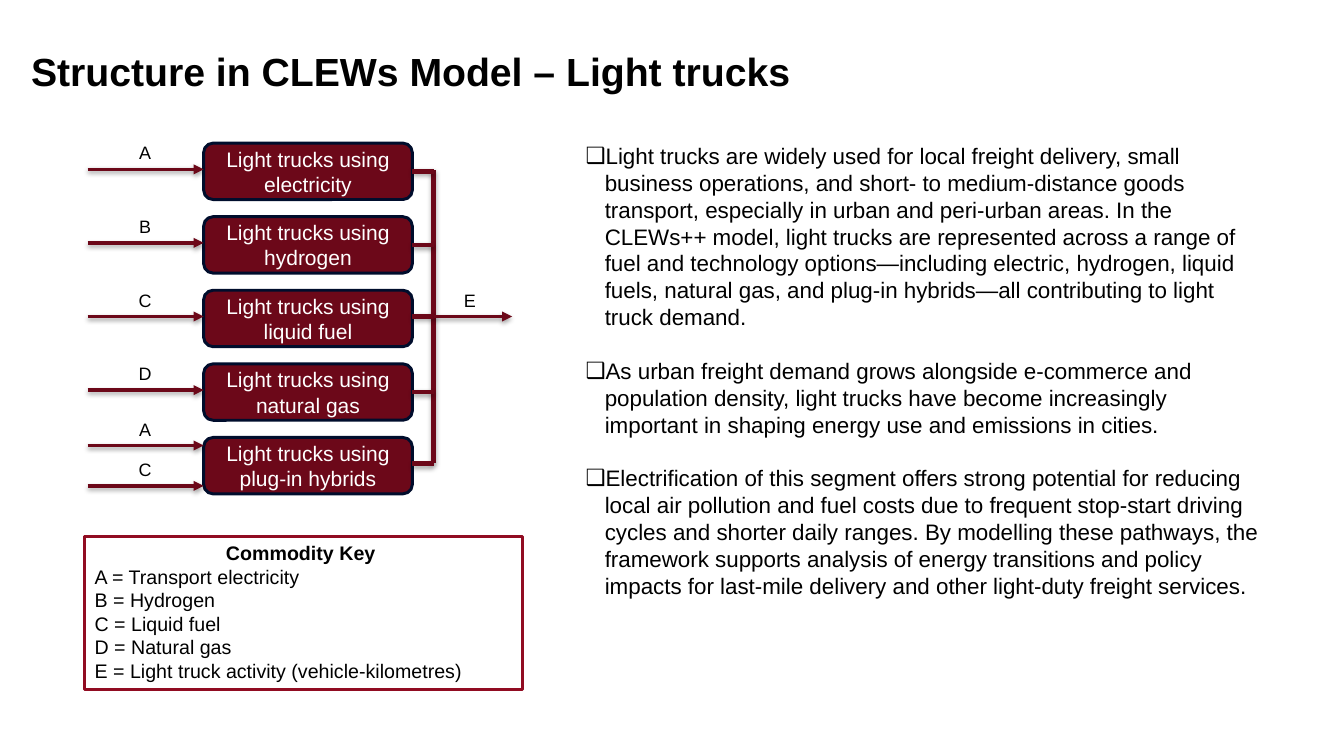
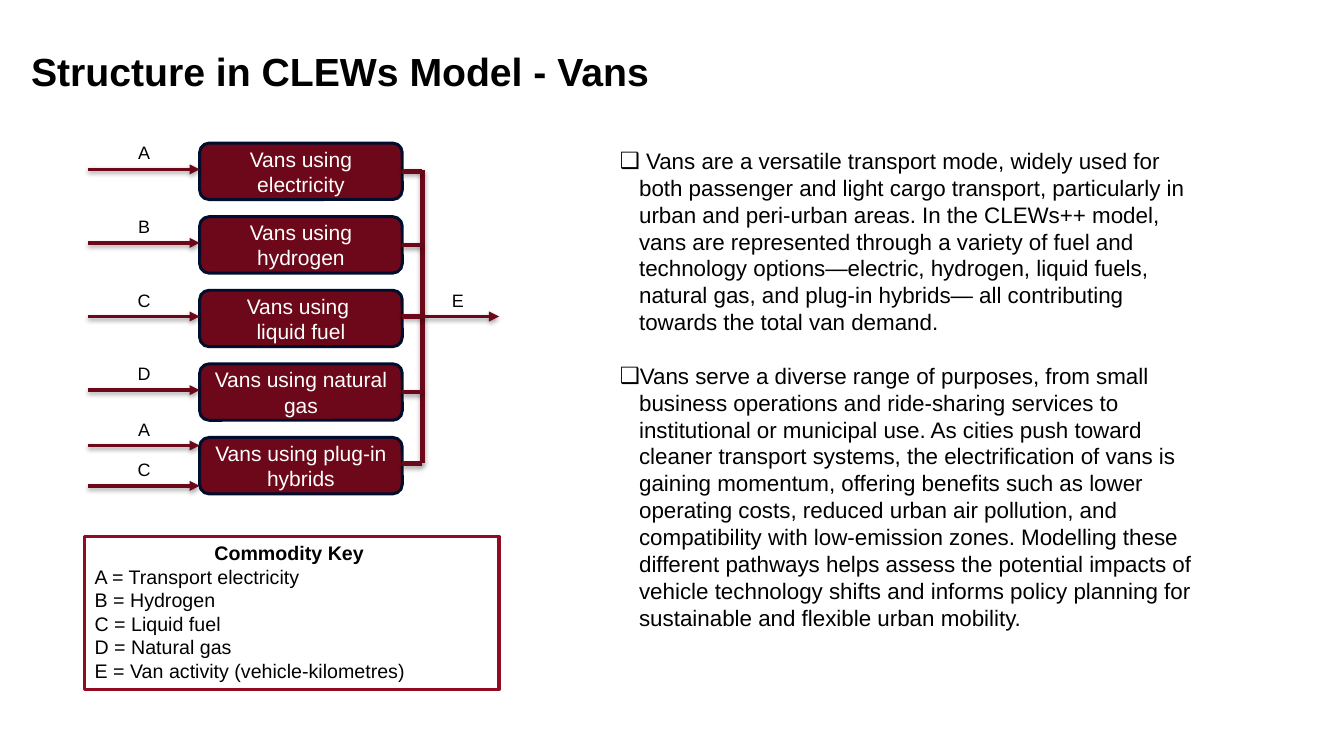
from copy import deepcopy

from lxml.etree import SubElement
from pptx import Presentation
from pptx.dml.color import RGBColor
from pptx.enum.shapes import MSO_CONNECTOR, MSO_SHAPE
from pptx.enum.text import MSO_ANCHOR, PP_ALIGN
from pptx.oxml.ns import qn
from pptx.util import Inches, Pt

# Shared colours and text formats
BLACK, WHITE = "000000", "FFFFFF"
MAROON, NAVY, KEY_RED = "6C0819", "000D2C", "910C22"
TITLE = {"name": "Arial", "size": Pt(28), "bold": True}
BODY = {"name": "Arial", "size": Pt(16)}
BOX = {"name": "Arial", "size": Pt(15)}
LABEL = {"name": "Arial", "size": Pt(12.8)}
KEY = {"name": "Arial", "size": Pt(14)}
KEY_HEADING = {**KEY, "bold": True}

# Rows of the diagram
ROW_PITCH = 0.73
BOX_TOP, BOX_HEIGHT = 1.42, 0.56
INPUT_LEFT, LABEL_LEFT = 0.87, 1.02
LABEL_RISE = 0.32
INPUTS = [(letter, 1.68 + row * ROW_PITCH) for row, letter in enumerate("ABCD")]
INPUTS += [("A", 4.42), ("C", 4.82)]
BRANCHES = (1.7, 2.43, 3.14, 3.89, 4.6)
OUTPUT_Y = 3.14
COMMODITIES = ["A = Transport electricity", "B = Hydrogen", "C = Liquid fuel", "D = Natural gas"]


def colour(value):
    return RGBColor.from_string(value)


class Deck:
    def __init__(self):
        self.presentation = Presentation()
        self.presentation.slide_width = Inches(13.33)
        self.presentation.slide_height = Inches(7.5)
        self.slide = None

    def new_slide(self, title):
        self.slide = self.presentation.slides.add_slide(self.presentation.slide_layouts[6])
        frame = self.text_box(0.21, 0, 12.7, 0.99, MSO_ANCHOR.BOTTOM)
        self.put_text(frame.paragraphs[0], title, TITLE).line_spacing = 0.9

    def put_text(self, paragraph, text, style, ink=BLACK, align=PP_ALIGN.LEFT):
        paragraph.text = text
        paragraph.alignment = align
        for run in paragraph.runs:
            for name, value in style.items():
                setattr(run.font, name, value)
            run.font.color.rgb = colour(ink)
        # Line breaks take the size of the text around them
        for line_break in paragraph._p.findall(qn("a:br")):
            line_break.append(deepcopy(paragraph.runs[0]._r.rPr))
        return paragraph

    def set_frame(self, frame, anchor, side=0.1):
        frame.word_wrap = True
        frame.vertical_anchor = anchor
        frame.margin_left = frame.margin_right = Inches(side)
        frame.margin_top = frame.margin_bottom = Inches(0.05)
        return frame

    def text_box(self, left, top, width, height, anchor=MSO_ANCHOR.TOP, side=0.1):
        box = self.slide.shapes.add_textbox(Inches(left), Inches(top), Inches(width), Inches(height))
        return self.set_frame(box.text_frame, anchor, side)

    def label(self, letter, left, line_y, width):
        frame = self.text_box(left, line_y - LABEL_RISE, width, 0.32, side=0.11)
        self.put_text(frame.paragraphs[0], letter, LABEL, align=PP_ALIGN.CENTER)

    def panel(self, kind, left, top, width, height, edge, weight, fill=None):
        shape = self.slide.shapes.add_shape(
            kind, Inches(left), Inches(top), Inches(width), Inches(height))
        shape.shadow.inherit = False
        if fill:
            shape.fill.solid()
            shape.fill.fore_color.rgb = colour(fill)
        else:
            shape.fill.background()
        shape.line.color.rgb = colour(edge)
        shape.line.width = Pt(weight)
        return shape.text_frame

    def technology(self, text, left, top, width):
        frame = self.panel(MSO_SHAPE.ROUNDED_RECTANGLE, left, top, width, BOX_HEIGHT,
                           NAVY, 2.14, MAROON)
        self.set_frame(frame, MSO_ANCHOR.MIDDLE, 0.11)
        self.put_text(frame.paragraphs[0], text, BOX, WHITE, PP_ALIGN.CENTER)

    def line(self, x1, y1, x2, y2, weight=3.21, arrow=False):
        connector = self.slide.shapes.add_connector(
            MSO_CONNECTOR.STRAIGHT, Inches(x1), Inches(y1), Inches(x2), Inches(y2))
        connector.line.color.rgb = colour(MAROON)
        connector.line.width = Pt(weight)
        if arrow:
            SubElement(connector.line._ln, qn("a:tailEnd"), type="triangle")
        effects = SubElement(connector._element.spPr, qn("a:effectLst"))
        shadow = SubElement(effects, qn("a:outerShdw"), blurRad=str(Pt(3.4)), dist=str(Pt(1.7)),
                            dir="5400000", rotWithShape="0")
        tint = SubElement(shadow, qn("a:srgbClr"), val=BLACK)
        SubElement(tint, qn("a:alpha"), val="37000")

    def arrow(self, x1, x2, y):
        self.line(x1, y, x2, y, 2.41, True)

    def bullets(self, left, top, width, height, points):
        frame = self.text_box(left, top, width, height)
        for index, point in enumerate(points):
            paragraph = frame.add_paragraph() if index else frame.paragraphs[0]
            properties = paragraph._p.get_or_add_pPr()
            properties.set("marL", str(Inches(0.19)))
            properties.set("indent", str(Inches(-0.22)))
            SubElement(SubElement(properties, qn("a:buClr")), qn("a:srgbClr"), val=BLACK)
            SubElement(properties, qn("a:buFont"), typeface="Arial")
            SubElement(properties, qn("a:buChar"), char="❑")
            self.put_text(paragraph, point, BODY)
            if index:
                paragraph.space_before = Pt(19.2)

    def commodity_key(self, width, activity):
        frame = self.panel(MSO_SHAPE.RECTANGLE, 0.84, 5.32, width, 1.52, KEY_RED, 2.25)
        self.set_frame(frame, MSO_ANCHOR.TOP)
        self.put_text(frame.paragraphs[0], "Commodity Key ", KEY_HEADING, align=PP_ALIGN.CENTER)
        for entry in COMMODITIES + [f"E = {activity} (vehicle-kilometres)"]:
            self.put_text(frame.add_paragraph(), entry, KEY)

    def diagram(self, technologies, left, width, bus, output_end, label_width):
        # Technologies and their fuel inputs
        for row, technology in enumerate(technologies):
            self.technology(technology, left, BOX_TOP + row * ROW_PITCH, width)
        for letter, y in INPUTS:
            self.arrow(INPUT_LEFT, left, y)
            self.label(letter, LABEL_LEFT, y, label_width)
        # Branches gathered into one output
        self.line(bus, 1.69, bus, 4.59)
        for y in BRANCHES:
            self.line(bus, y, left + width, y)
        self.arrow(bus, output_end, OUTPUT_Y)
        self.label("E", bus - 0.06, OUTPUT_Y, label_width)


SLIDES = [
    {
        "title": "Structure in CLEWs Model – Light trucks",
        "technologies": [f"Light trucks using {fuel}" for fuel in (
            "electricity", "hydrogen", "liquid fuel", "natural gas", "plug-in hybrids")],
        "layout": {"left": 2.02, "width": 2.07, "bus": 4.3, "output_end": 5.08,
                   "label_width": 0.84},
        "key": (4.34, "Light truck activity"),
        "text_area": (5.71, 1.36, 6.89, 4.68),
        "points": [
            "Light trucks are widely used for local freight delivery, small business operations, "
            "and short- to medium-distance goods transport, especially in urban and peri-urban "
            "areas. In the CLEWs++ model, light trucks are represented across a range of fuel and "
            "technology options—including electric, hydrogen, liquid fuels, natural gas, and "
            "plug-in hybrids—all contributing to light truck demand.",
            "As urban freight demand grows alongside e-commerce and population density, light "
            "trucks have become increasingly important in shaping energy use and emissions in "
            "cities.",
            "Electrification of this segment offers strong potential for reducing local air "
            "pollution and fuel costs due to frequent stop-start driving cycles and shorter daily "
            "ranges. By modelling these pathways, the framework supports analysis of energy "
            "transitions and policy impacts for last-mile delivery and other light-duty freight "
            "services.",
        ],
    },
    {
        "title": "Structure in CLEWs Model - Vans",
        "technologies": [f"Vans using {fuel}" for fuel in (
            "electricity", "hydrogen", "\vliquid fuel", "natural gas", "plug-in hybrids")],
        "layout": {"left": 1.98, "width": 2.01, "bus": 4.19, "output_end": 4.95,
                   "label_width": 0.82},
        "key": (4.11, "Van activity"),
        "text_area": (6.05, 1.41, 5.91, 4.95),
        "points": [
            " Vans are a versatile transport mode, widely used for both passenger and light cargo "
            "transport, particularly in urban and peri-urban areas. In the CLEWs++ model, vans are "
            "represented through a variety of fuel and technology options—electric, hydrogen, "
            "liquid fuels, natural gas, and plug-in hybrids— all contributing towards the total "
            "van demand.",
            "Vans serve a diverse range of purposes, from small business operations and "
            "ride-sharing services to institutional or municipal use. As cities push toward "
            "cleaner transport systems, the electrification of vans is gaining momentum, offering "
            "benefits such as lower operating costs, reduced urban air pollution, and "
            "compatibility with low-emission zones. Modelling these different pathways helps "
            "assess the potential impacts of vehicle technology shifts and informs policy "
            "planning for sustainable and flexible urban mobility.",
        ],
    },
]


def main():
    deck = Deck()
    for content in SLIDES:
        deck.new_slide(content["title"])
        deck.bullets(*content["text_area"], content["points"])
        deck.diagram(content["technologies"], **content["layout"])
        deck.commodity_key(*content["key"])
    deck.presentation.save("out.pptx")


if __name__ == "__main__":
    main()
